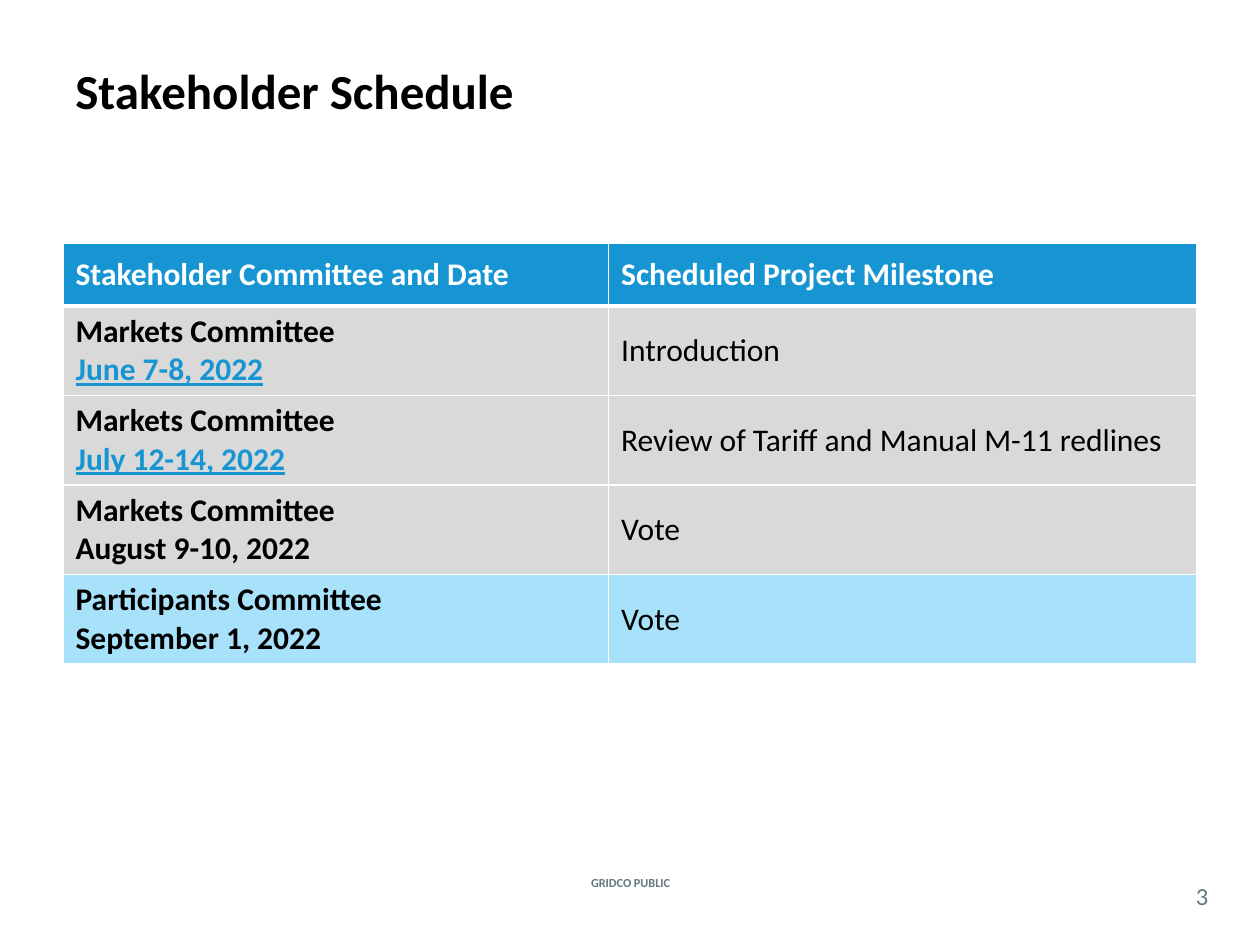
from lxml import etree
from pptx import Presentation
from pptx.dml.color import RGBColor
from pptx.enum.text import MSO_ANCHOR, PP_ALIGN
from pptx.oxml.ns import qn
from pptx.util import Inches, Pt

MIDDLE = MSO_ANCHOR.MIDDLE
TOP = MSO_ANCHOR.TOP
LEFT = PP_ALIGN.LEFT
CENTER = PP_ALIGN.CENTER

FONT = "Calibri"
BLACK, WHITE, SLATE = "000000", "FFFFFF", "62777F"
BLUE, GRAY, SKY = "1795D2", "D9D9D9", "A7E2FA"

HEADS = ["Stakeholder Committee and Date", "Scheduled Project Milestone"]
ROWS = [
    ("Markets Committee", "June 7-8, 2022", True, "Introduction", GRAY),
    ("Markets Committee", "July 12-14, 2022", True,
     "Review of Tariff and Manual M-11 redlines", GRAY),
    ("Markets Committee", "August 9-10, 2022", False, "Vote", GRAY),
    ("Participants Committee", "September 1, 2022", False, "Vote", SKY),
]


def color(code):
    return RGBColor.from_string(code)


def add_run(para, text, size, code, bold=False, under=False):
    run = para.add_run()
    run.text = text
    font = run.font
    font.name, font.size = FONT, Pt(size)
    font.bold, font.underline = bold, under
    font.color.rgb = color(code)


def add_label(slide, box, text, size, code, bold, align, inset=None):
    frame = slide.shapes.add_textbox(*map(Inches, box)).text_frame
    frame.word_wrap = True
    frame.vertical_anchor = MIDDLE
    if inset is not None:
        frame.margin_left = frame.margin_right = Inches(inset)
        frame.margin_top = frame.margin_bottom = Inches(inset)
    para = frame.paragraphs[0]
    para.alignment = align
    add_run(para, text, size, code, bold)


def set_edges(cell, top, bottom):
    props = cell._tc.get_or_add_tcPr()
    for side, width in (("L", 1), ("R", 1), ("T", top), ("B", bottom)):
        line = etree.SubElement(props, qn("a:ln" + side), w=str(Pt(width)))
        fill = etree.SubElement(line, qn("a:solidFill"))
        etree.SubElement(fill, qn("a:srgbClr"), val=WHITE)


def fill_cell(cell, lines, code, anchor=MIDDLE, top=1, bottom=1):
    set_edges(cell, top, bottom)
    cell.fill.solid()
    cell.fill.fore_color.rgb = color(code)
    cell.vertical_anchor = anchor
    frame = cell.text_frame
    for num, (text, ink, bold, under) in enumerate(lines):
        para = frame.add_paragraph() if num else frame.paragraphs[0]
        add_run(para, text, 18, ink, bold, under)


def add_plan(slide, box):
    left, top, width, height = box
    table = slide.shapes.add_table(
        len(ROWS) + 1, len(HEADS), *map(Inches, box)).table
    first, head = 4.33, 0.5
    table.columns[0].width = Inches(first)
    table.columns[1].width = Inches(width - first)
    for row in table.rows:
        row.height = Inches((height - head) / len(ROWS))
    table.rows[0].height = Inches(head)
    for col, text in enumerate(HEADS):
        fill_cell(table.cell(0, col), [(text, WHITE, True, False)], BLUE, bottom=3)
    for num, (group, date, linked, goal, code) in enumerate(ROWS, 1):
        edge = 3 if num == 1 else 1
        ink = BLUE if linked else BLACK
        lines = [(group, BLACK, True, False), (date, ink, True, linked)]
        fill_cell(table.cell(num, 0), lines, code, TOP, edge)
        fill_cell(table.cell(num, 1), [(goal, BLACK, False, False)], code, top=edge)


def add_footer(slide, box):
    left, top, width, height = box
    add_label(slide, (left + 3.77, top, 1.47, 0.17),
              "GRIDCO PUBLIC", 7, SLATE, True, CENTER)
    add_label(slide, (left + width - 0.42, top + height - 0.29, 0.42, 0.29),
              "3", 14, SLATE, False, CENTER, 0)


def main():
    deck = Presentation()
    deck.slide_width, deck.slide_height = Inches(10), Inches(7.5)
    slide = deck.slides.add_slide(deck.slide_layouts[6])
    add_label(slide, (0.5, 0.42, 9, 0.58),
              "Stakeholder Schedule", 28, BLACK, True, LEFT)
    add_plan(slide, (0.5, 1.93, 9, 3.34))
    add_footer(slide, (0.5, 6.92, 9.25, 0.33))
    deck.save("out.pptx")


if __name__ == "__main__":
    main()
